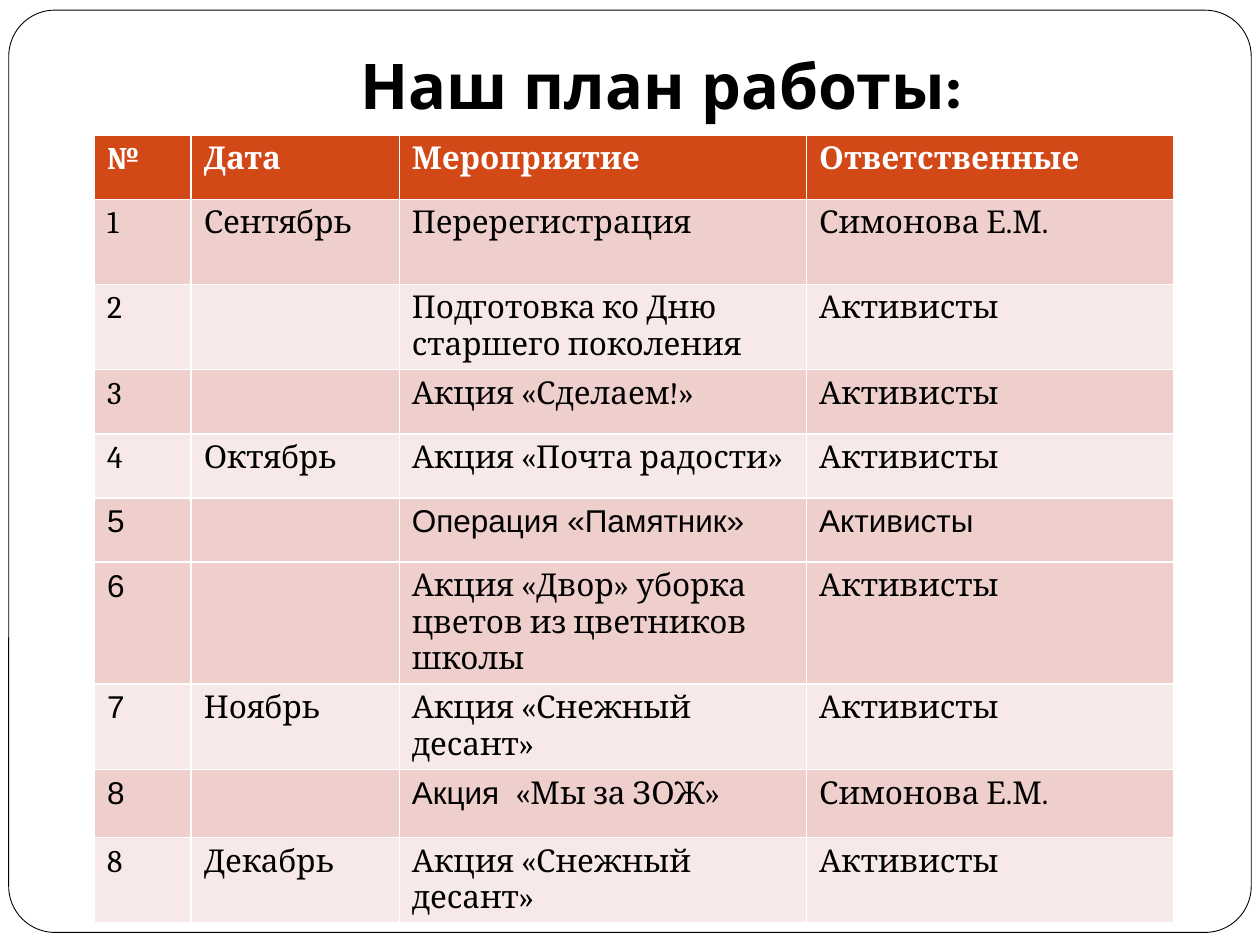
"""Build a slide with the activists' work plan as a table."""
from dataclasses import dataclass

from pptx import Presentation
from pptx.dml.color import RGBColor
from pptx.enum.shapes import MSO_SHAPE
from pptx.enum.text import MSO_ANCHOR, MSO_AUTO_SIZE, PP_ALIGN
from pptx.util import Pt

ROUND = MSO_SHAPE.ROUNDED_RECTANGLE
BOTTOM = MSO_ANCHOR.BOTTOM
FIXED = MSO_AUTO_SIZE.NONE
CENTER = PP_ALIGN.CENTER
SERIF, SANS = "Cambria", "Arial"
BLACK, WHITE = "000000", "FFFFFF"
RED, ROSE, PALE = "D34817", "EFCFCC", "F7E9E7"
WIDTHS = (55.3, 118.9, 232.8, 209.8)
TEAM, HEAD = "Активисты", "Симонова Е.М."


@dataclass
class Row:
    num: str
    month: str
    event: str | tuple[str, str]
    lead: str
    height: float
    fill: str
    mark: str = SERIF
    face: str = SERIF


ROWS = (
    Row("№", "Дата", "Мероприятие", "Ответственные", 36.7, RED),
    Row("1", "Сентябрь", "Перерегистрация", HEAD, 48.6, ROSE),
    Row("2", "", "Подготовка ко Дню старшего поколения", TEAM, 48.6, PALE),
    Row("3", "", "Акция «Сделаем!»", TEAM, 36.7, ROSE),
    Row("4", "Октябрь", "Акция «Почта радости»", TEAM, 36.7, PALE),
    Row("5", "", "Операция «Памятник»", TEAM, 36.7, ROSE, SANS, SANS),
    Row("6", "", "Акция «Двор» уборка цветов из цветников школы", TEAM,
        69, ROSE, SANS),
    Row("7", "Ноябрь", "Акция «Снежный десант»", TEAM, 48.6, PALE, SANS),
    Row("8", "", ("Акция ", " «Мы за ЗОЖ»"), HEAD, 38.9, ROSE, SANS),
    Row("8", "Декабрь", "Акция «Снежный десант»", TEAM, 48.6, PALE),
)


def color(code: str) -> RGBColor:
    """Turn a hex string into a colour."""
    return RGBColor.from_string(code)


def style(run, face: str, size: float, ink: str, bold: bool) -> None:
    """Format one run."""
    font = run.font
    font.name, font.size, font.bold = face, Pt(size), bold
    font.color.rgb = color(ink)


def draw_frame(slide) -> None:
    """Draw the rounded frame behind the title."""
    frame = slide.shapes.add_shape(ROUND, Pt(5), Pt(5.8), Pt(710), Pt(527))
    frame.adjustments[0] = 0.05
    frame.shadow.inherit = False
    frame.fill.solid()
    frame.fill.fore_color.rgb = color(WHITE)
    frame.line.color.rgb = color(BLACK)
    frame.line.width = Pt(0.5)
    slide.shapes.title.element.addprevious(frame.element)


def draw_title(slide) -> None:
    """Place and format the title."""
    title = slide.shapes.title
    title.left, title.top = Pt(72), Pt(21.6)
    title.width, title.height = Pt(612), Pt(55.4)
    frame = title.text_frame
    frame.text = "Наш план работы:"
    frame.word_wrap, frame.auto_size = True, FIXED
    frame.vertical_anchor = BOTTOM
    frame.margin_bottom = Pt(7.2)
    para = frame.paragraphs[0]
    para.alignment = CENTER
    style(para.runs[0], "Karla", 36, BLACK, True)


def fill_cell(cell, text: str | tuple[str, str], face: str, row: Row) -> None:
    """Write one cell; a pair of texts sets the first one in sans."""
    cell.fill.solid()
    cell.fill.fore_color.rgb = color(row.fill)
    top = row.fill == RED
    para = cell.text_frame.paragraphs[0]
    parts = ((text, face),) if isinstance(text, str) else zip(text, (SANS, face))
    for part, name in parts:
        if part:
            run = para.add_run()
            run.text = part
            style(run, name, 18, WHITE if top else BLACK, top)


def draw_plan(slide) -> None:
    """Draw the table of the plan."""
    high = sum(row.height for row in ROWS)
    table = slide.shapes.add_table(
        len(ROWS), len(WIDTHS), Pt(54), Pt(77.2), Pt(sum(WIDTHS)), Pt(high)
    ).table
    for col, width in zip(table.columns, WIDTHS):
        col.width = Pt(width)
    for line, row in zip(table.rows, ROWS):
        line.height = Pt(row.height)
        texts = (row.num, row.month, row.event, row.lead)
        faces = (row.mark, row.face, row.face, row.face)
        for cell, text, face in zip(line.cells, texts, faces):
            fill_cell(cell, text, face, row)


def main() -> None:
    """Build and save the slide."""
    deck = Presentation()
    deck.slide_width, deck.slide_height = Pt(720), Pt(540)
    slide = deck.slides.add_slide(deck.slide_layouts[5])
    draw_frame(slide)
    draw_title(slide)
    draw_plan(slide)
    deck.save("out.pptx")


if __name__ == "__main__":
    main()
